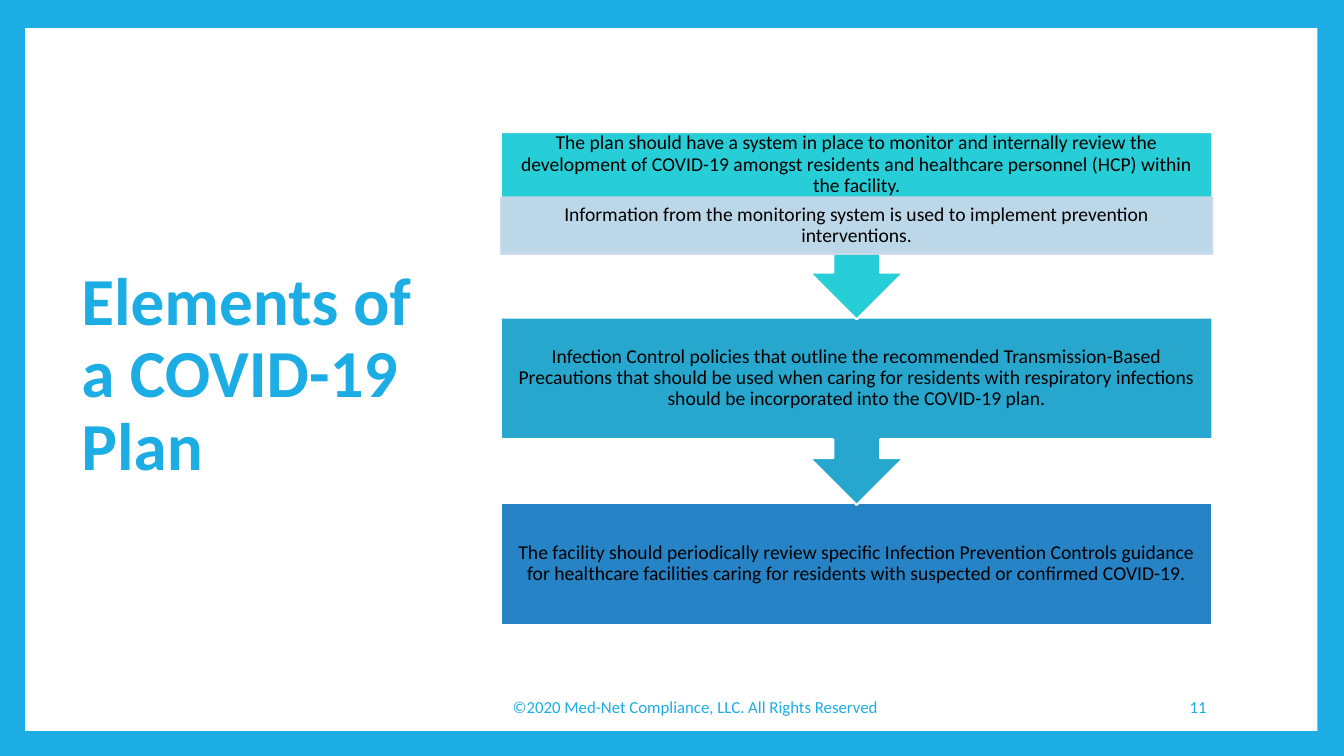
from lxml.etree import SubElement
from pptx import Presentation
from pptx.dml.color import RGBColor
from pptx.enum.shapes import MSO_SHAPE
from pptx.enum.text import MSO_ANCHOR, MSO_AUTO_SIZE, PP_ALIGN
from pptx.oxml.ns import qn
from pptx.util import Pt

COLORS = {
    "accent": "1CADE4",
    "white": "FFFFFF",
    "black": "000000",
    "turquoise": "27CED7",
    "teal": "27A7CE",
    "blue": "2683C6",
    "pale": "CDD9EA",
}
FONT = "Calibri"

# Step column, in points
STEP_LEFT, STEP_WIDTH = 357.8, 508.3
STEP_TOP, STEP_PITCH = 94.3, 132.5
CALLOUT_HEIGHT, BOX_HEIGHT = 133.9, 87.1
STRIP_TOP, STRIP_HEIGHT = 141.1, 40.3

# Shape kind, height, colour, top and bottom inset, text
STEPS = [
    (MSO_SHAPE.DOWN_ARROW_CALLOUT, CALLOUT_HEIGHT, "turquoise", (0, STRIP_HEIGHT),
     "The plan should have a system in place to monitor and internally review the "
     "development of COVID-19 amongst residents and healthcare personnel (HCP) "
     "within the facility."),
    (MSO_SHAPE.DOWN_ARROW_CALLOUT, CALLOUT_HEIGHT, "teal", (8, 8),
     "Infection Control policies that outline the recommended Transmission-Based "
     "Precautions that should be used when caring for residents with respiratory "
     "infections should be incorporated into the COVID-19 plan."),
    (MSO_SHAPE.RECTANGLE, BOX_HEIGHT, "blue", (8, 8),
     "The facility should periodically review specific Infection Prevention Controls "
     "guidance for healthcare facilities caring for residents with suspected or "
     "confirmed COVID-19."),
]
STRIP_TEXT = ("Information from the monitoring system is used to implement "
              "prevention interventions.")


def rgb(name):
    return RGBColor.from_string(COLORS[name])


def write(shape, text, size, color, align, bold=False, line_spacing=None):
    frame = shape.text_frame
    frame.word_wrap = True
    frame.auto_size = MSO_AUTO_SIZE.NONE
    frame.vertical_anchor = MSO_ANCHOR.MIDDLE
    frame.text = text
    para = frame.paragraphs[0]
    para.alignment = align
    para.line_spacing = line_spacing
    para.font.name = FONT
    para.font.size = Pt(size)
    para.font.bold = bold
    para.font.color.rgb = rgb(color)


def add_block(page, kind, left, top, width, height, fill, line=None):
    block = page.shapes.add_shape(kind, Pt(left), Pt(top), Pt(width), Pt(height))
    block.shadow.inherit = False
    block.fill.solid()
    block.fill.fore_color.rgb = rgb(fill)
    if line:
        block.line.color.rgb = rgb(line)
        block.line.width = Pt(1.5)
    else:
        block.line.fill.background()
    return block


def add_step(page, kind, top, height, fill, line, insets, text):
    step = add_block(page, kind, STEP_LEFT, top, STEP_WIDTH, height, fill, line)
    frame = step.text_frame
    frame.margin_left = frame.margin_right = Pt(8)
    frame.margin_top, frame.margin_bottom = (Pt(inset) for inset in insets)
    write(step, text, 14, "black", PP_ALIGN.CENTER, line_spacing=0.9)
    return step


def set_opacity(shape, percent):
    """Apply one opacity to the fill and the outline."""
    properties = shape._element.spPr
    for parent in (properties, properties.find(qn("a:ln"))):
        color = parent.find(qn("a:solidFill")).find(qn("a:srgbClr"))
        SubElement(color, qn("a:alpha")).set("val", str(percent * 1000))


def add_title(page, text):
    title = page.shapes.title
    title.left, title.top, title.width, title.height = Pt(51), Pt(48), Pt(265), Pt(441.4)
    write(title, text, 48, "accent", PP_ALIGN.LEFT, bold=True, line_spacing=0.9)


def add_footer(page, left, width, text, align):
    footer = page.shapes.add_textbox(Pt(left), Pt(490.3), Pt(width), Pt(28.8))
    write(footer, text, 12, "accent", align)


def main():
    deck = Presentation()
    deck.slide_width, deck.slide_height = Pt(960), Pt(540)
    page = deck.slides.add_slide(deck.slide_layouts[5])

    # Coloured frame with a white panel behind the title
    page.background.fill.solid()
    page.background.fill.fore_color.rgb = rgb("accent")
    panel = add_block(page, MSO_SHAPE.RECTANGLE, 18, 20, 923, 502, "white")
    page.shapes._spTree.insert(2, panel._element)

    # Title and footer
    add_title(page, "Elements of a COVID-19 Plan")
    add_footer(page, 311, 371.5, "©2020 Med-Net Compliance, LLC. All Rights Reserved",
               PP_ALIGN.CENTER)
    add_footer(page, 734.4, 134.6, "11", PP_ALIGN.RIGHT)

    # Steps from the bottom up, so each arrow tip lies over the next box
    for index, (kind, height, fill, insets, text) in reversed(list(enumerate(STEPS))):
        top = STEP_TOP + index * STEP_PITCH
        add_step(page, kind, top, height, fill, "white", insets, text)

    # Translucent detail strip in the first step
    strip = add_step(page, MSO_SHAPE.RECTANGLE, STRIP_TOP, STRIP_HEIGHT,
                     "pale", "pale", (1.4, 1.4), STRIP_TEXT)
    set_opacity(strip, 90)

    deck.save("out.pptx")


if __name__ == "__main__":
    main()
